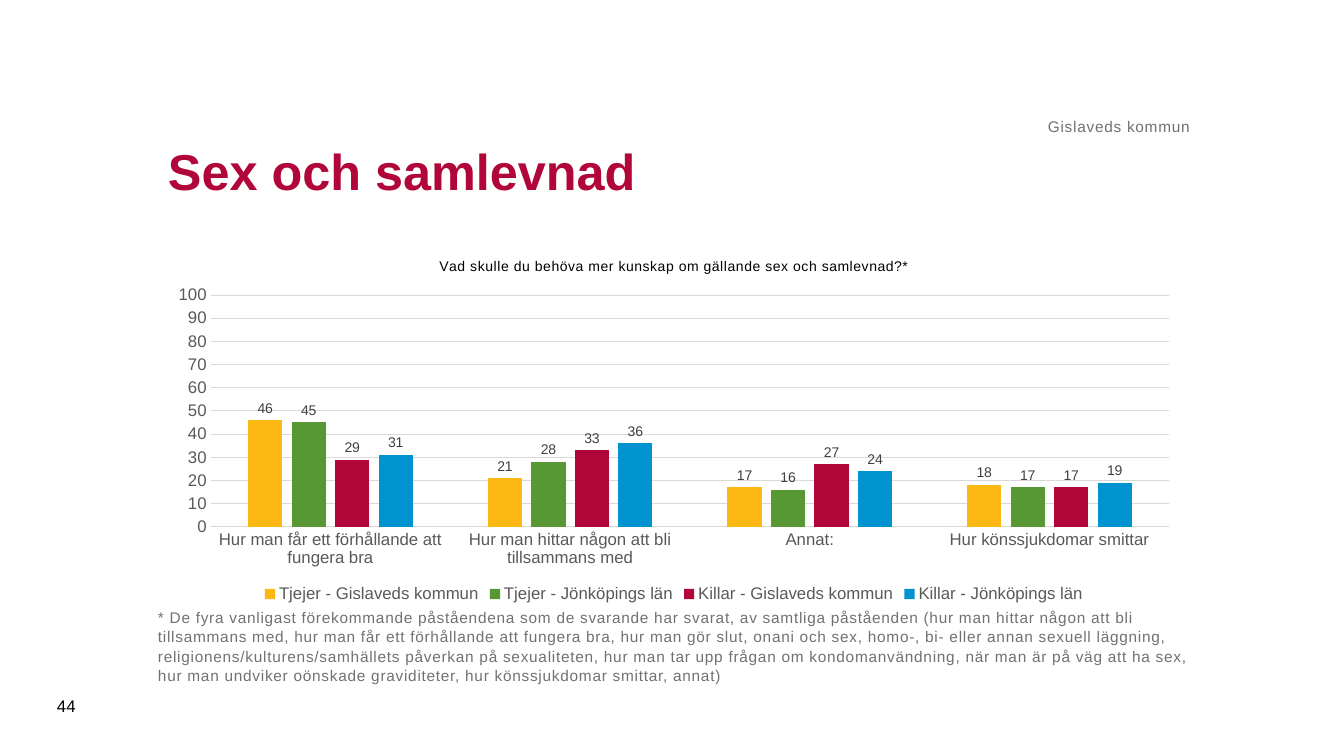
"""Build a slide with a clustered column chart on knowledge needs about sex and relationships."""
from pptx import Presentation
from pptx.chart.data import CategoryChartData
from pptx.dml.color import RGBColor
from pptx.enum.chart import XL_CHART_TYPE, XL_LABEL_POSITION, XL_LEGEND_POSITION, XL_TICK_MARK
from pptx.enum.text import MSO_ANCHOR, PP_ALIGN
from pptx.util import Emu, Pt

COLUMNS = XL_CHART_TYPE.COLUMN_CLUSTERED
OUTSIDE = XL_LABEL_POSITION.OUTSIDE_END
BOTTOM_LEGEND = XL_LEGEND_POSITION.BOTTOM
NO_TICK = XL_TICK_MARK.NONE
TOP, MIDDLE, BOTTOM = MSO_ANCHOR.TOP, MSO_ANCHOR.MIDDLE, MSO_ANCHOR.BOTTOM
LEFT, RIGHT = PP_ALIGN.LEFT, PP_ALIGN.RIGHT

FONT = "Arial"
NUMBER_FORMAT = "#,##0;#,##0"
EMU_PER_PX = 914400 / 100.8
SLIDE_W, SLIDE_H = 1344, 756
MARGIN, CONTENT_W = 158, 1032
GREY, GRID, AXIS_TEXT = "717171", "D9D9D9", "595959"

CHART_TITLE = "Vad skulle du behöva mer kunskap om gällande sex och samlevnad?*"
CATEGORIES = [
    "Hur man får ett förhållande att fungera bra",
    "Hur man hittar någon att bli tillsammans med",
    "Annat:",
    "Hur könssjukdomar smittar",
]
SERIES = [
    ("Tjejer - Gislaveds kommun", (46, 21, 17, 18), "FDB913"),
    ("Tjejer - Jönköpings län", (45, 28, 16, 17), "579835"),
    ("Killar - Gislaveds kommun", (29, 33, 27, 17), "B1063A"),
    ("Killar - Jönköpings län", (31, 36, 24, 19), "0093D0"),
]
FOOTNOTE = (
    "* De fyra vanligast förekommande påståendena som de svarande har svarat, av samtliga "
    "påståenden (hur man hittar någon att bli tillsammans med, hur man får ett förhållande att "
    "fungera bra, hur man gör slut, onani och sex, homo-, bi- eller annan sexuell läggning, "
    "religionens/kulturens/samhällets påverkan på sexualiteten, hur man tar upp frågan om "
    "kondomanvändning, när man är på väg att ha sex, hur man undviker oönskade graviditeter, "
    "hur könssjukdomar smittar, annat)"
)
CHART_BOX = (MARGIN, 242, CONTENT_W, 365)
TEXTS = [
    dict(text="Sex och samlevnad", box=(MARGIN, 99, CONTENT_W, 143), size=36,
         color="B1063A", bold=True, anchor=MIDDLE, inset=10),
    dict(text=FOOTNOTE, box=(MARGIN, 607, CONTENT_W, 95), size=11,
         color=GREY, anchor=TOP, spacing=50, line_spacing=1.05),
    dict(text="Gislaveds kommun", box=(MARGIN, 62, CONTENT_W, 74), size=11,
         color=GREY, anchor=BOTTOM, align=RIGHT, spacing=50),
    dict(text="44", box=(47, 686, 57, 40), size=12,
         color="000000", anchor=MIDDLE, inset=10),
]


def px(n):
    return Emu(round(n * EMU_PER_PX))


def rgb(value):
    return RGBColor.from_string(value)


def set_font(font, size, color, bold=False):
    for name, value in dict(name=FONT, size=Pt(size), bold=bold).items():
        setattr(font, name, value)
    font.color.rgb = rgb(color)


def add_run(p, text, size, color, bold=False, spacing=0):
    r = p.add_run()
    r.text = text
    set_font(r.font, size, color, bold)
    if spacing:
        r._r.get_or_add_rPr().set("spc", str(spacing))


def add_text(s, text, box, size, color, anchor, bold=False, align=LEFT,
             inset=0, spacing=0, line_spacing=1.0):
    tf = s.shapes.add_textbox(*map(px, box)).text_frame
    frame = dict(word_wrap=True, vertical_anchor=anchor, margin_left=px(inset),
                 margin_right=px(inset), margin_top=px(inset / 2), margin_bottom=px(inset / 2))
    for name, value in frame.items():
        setattr(tf, name, value)
    p = tf.paragraphs[0]
    p.alignment, p.line_spacing = align, line_spacing
    add_run(p, text, size, color, bold, spacing)


def set_line(line, color):
    line.color.rgb = rgb(color)
    line.width = Pt(0.75)


def add_columns(s):
    data = CategoryChartData(number_format=NUMBER_FORMAT)
    data.categories = CATEGORIES
    for name, values, _ in SERIES:
        data.add_series(name, values)
    chart = s.shapes.add_chart(COLUMNS, *map(px, CHART_BOX), data).chart
    set_font(chart.font, 10, "000000")
    add_run(chart.chart_title.text_frame.paragraphs[0], CHART_TITLE, 10, "000000", spacing=50)
    chart.chart_title.include_in_layout = False

    chart.has_legend = True
    chart.legend.position = BOTTOM_LEGEND
    chart.legend.include_in_layout = False
    set_font(chart.legend.font, 12, AXIS_TEXT)

    for axis in (chart.category_axis, chart.value_axis):
        axis.major_tick_mark = axis.minor_tick_mark = NO_TICK
        set_font(axis.tick_labels.font, 12, AXIS_TEXT)
    set_line(chart.category_axis.format.line, GRID)
    scale = dict(minimum_scale=0, maximum_scale=100, major_unit=10, has_major_gridlines=True)
    for name, value in scale.items():
        setattr(chart.value_axis, name, value)
    chart.value_axis.format.line.fill.background()
    set_line(chart.value_axis.major_gridlines.format.line, GRID)

    plot = chart.plots[0]
    plot.gap_width, plot.overlap, plot.vary_by_categories = 219, -27, False
    label_format = dict(show_value=True, position=OUTSIDE, number_format=NUMBER_FORMAT,
                        number_format_is_linked=False)
    for series, (_, _, color) in zip(plot.series, SERIES):
        series.format.fill.solid()
        series.format.fill.fore_color.rgb = rgb(color)
        for name, value in label_format.items():
            setattr(series.data_labels, name, value)
        set_font(series.data_labels.font, 10, "404040")


def main():
    prs = Presentation()
    prs.slide_width, prs.slide_height = px(SLIDE_W), px(SLIDE_H)
    s = prs.slides.add_slide(prs.slide_layouts[6])
    add_columns(s)
    for text in TEXTS:
        add_text(s, **text)
    prs.save("out.pptx")


if __name__ == "__main__":
    main()
